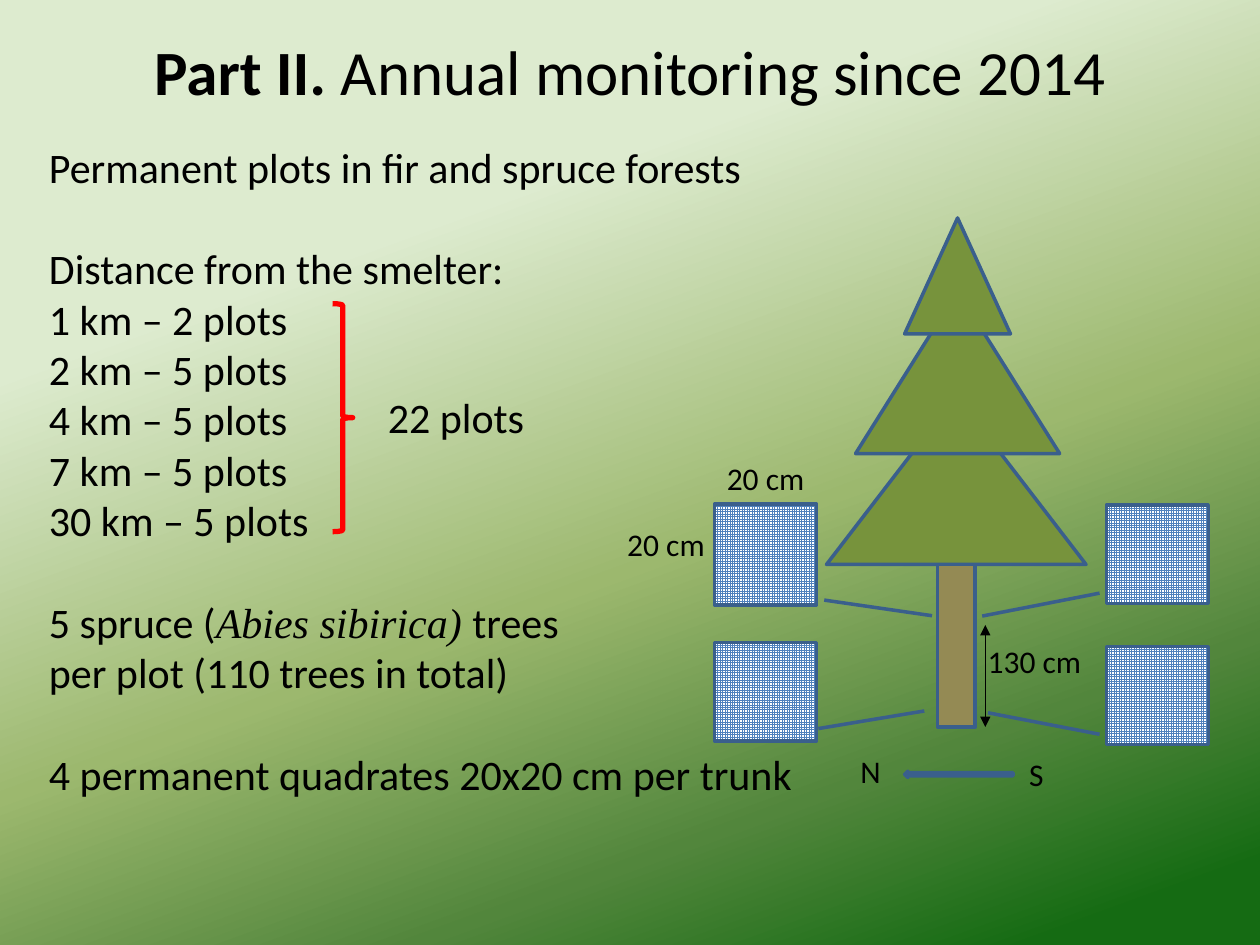
from typing import NamedTuple
from lxml import etree
from pptx import Presentation, util as u
from pptx.dml.color import RGBColor
from pptx.enum import dml, shapes, text
from pptx.oxml import ns

KIND = shapes.MSO_SHAPE
EDGE, LEAF, BARK, BLUE = "3A5F8C", "77933C", "948A54", "4F81BD"
BLACK, RED, WHITE = "000000", "FF0000", "FFFFFF"
SANS, SERIF = "Calibri", "Times New Roman"
BODY = 24
GAP = 29.3  # one line of body text, in points


class Box(NamedTuple):
    x: float
    y: float
    w: float
    h: float


class Run(NamedTuple):
    words: str
    bold: bool = False
    italic: bool = False
    font: str = SANS


class Para(NamedTuple):
    runs: list[Run]
    before: float = 0


class Quad(NamedTuple):
    box: Box
    lead: tuple[float, ...]


class Label(NamedTuple):
    words: str
    box: Box
    wrap: bool = True
    size: int = 18


def hue(code: str) -> RGBColor:
    return RGBColor.from_string(code)


def place(box: Box) -> list[u.Length]:
    return [u.Inches(v) for v in box]


def paint(slide) -> None:
    """Fill the background with a slanted green gradient."""
    fill = slide.background.fill
    fill.gradient()
    fill.gradient_angle = 290
    stops = slide.background.fill._fill._gradFill.find(ns.qn("a:gsLst"))
    for old in list(stops):
        stops.remove(old)
    for pos, code, alpha in ((27, "DDEBCF", 100), (57, "9CB86E", 100),
                             (78, "52863C", 64), (94, "156B13", 100)):
        stop = etree.SubElement(stops, ns.qn("a:gs"), pos=str(pos * 1000))
        tint = etree.SubElement(stop, ns.qn("a:srgbClr"), val=code)
        if alpha < 100:
            etree.SubElement(tint, ns.qn("a:alpha"), val=str(alpha * 1000))


def shape(slide, kind, box: Box, fill: str | None, edge: str = EDGE,
          width: float = 2):
    item = slide.shapes.add_shape(kind, *place(box))
    item.shadow.inherit = False
    if fill:
        item.fill.solid()
        item.fill.fore_color.rgb = hue(fill)
    else:
        item.fill.background()
    item.line.color.rgb = hue(edge)
    item.line.width = u.Pt(width)
    return item


def write(slide, box: Box, paras: list[Para], size: int, wrap: bool = True,
          align=text.PP_ALIGN.LEFT):
    frame = slide.shapes.add_textbox(*place(box)).text_frame
    frame.word_wrap = wrap
    for i, para in enumerate(paras):
        p = frame.add_paragraph() if i else frame.paragraphs[0]
        p.alignment = align
        p.space_before = u.Pt(para.before)
        for run in para.runs:
            r = p.add_run()
            r.text = run.words
            r.font.name, r.font.size = run.font, u.Pt(size)
            r.font.bold, r.font.italic = run.bold, run.italic
            r.font.color.rgb = hue(BLACK)
    return frame


def quad(slide, item: Quad) -> None:
    """Draw a gridded sample square with its leader line."""
    square = shape(slide, KIND.LINE_CALLOUT_1, item.box, None)
    for i, value in enumerate(item.lead):
        square.adjustments[i] = value
    square.fill.patterned()
    square.fill.pattern = dml.MSO_PATTERN.SMALL_GRID
    square.fill.fore_color.rgb = hue(BLUE)
    square.fill.back_color.rgb = hue(WHITE)


def span(slide, x: float, top: float, end: float) -> None:
    """Draw a vertical dimension line with two arrowheads."""
    line = slide.shapes.add_connector(
        shapes.MSO_CONNECTOR.STRAIGHT, *place(Box(x, top, x, end)))
    line.line.color.rgb = hue(BLACK)
    line.line.width = u.Pt(0.75)
    props = line.line._get_or_add_ln()
    for tag in ("a:headEnd", "a:tailEnd"):
        etree.SubElement(props, ns.qn(tag), type="triangle")
    etree.SubElement(line._element.spPr, ns.qn("a:effectLst"))


TITLE = [Para([Run("Part II.", bold=True),
               Run(" Annual monitoring since 2014")])]
NOTES = [
    Para([Run("Permanent plots in fir and spruce forests")]),
    Para([Run("Distance from the smelter:")], GAP),
    *(Para([Run(f"{km} km – {n} plots")])
      for km, n in ((1, 2), (2, 5), (4, 5), (7, 5), (30, 5))),
    Para([Run("5 spruce ("),
          Run("Abies sibirica) ", italic=True, font=SERIF),
          Run("trees")], GAP),
    Para([Run("per plot (110 trees in total)")]),
    Para([Run("4 permanent quadrates 20x20 cm per trunk")], GAP),
]
TREE = [
    (KIND.ISOSCELES_TRIANGLE, Box(6.56, 3.14, 2.06, 1.34), LEAF),
    (KIND.ISOSCELES_TRIANGLE, Box(6.79, 2.31, 1.62, 1.29), LEAF),
    (KIND.RECTANGLE, Box(7.44, 4.48, 0.3, 1.29), BARK),
    (KIND.ISOSCELES_TRIANGLE, Box(7.18, 1.73, 0.84, 0.92), LEAF),
]
WEST, EAST = 5.67, 8.78
QUADS = [
    Quad(Box(EAST, 5.13, 0.81, 0.78), (0.895, -0.066, 0.676, -1.159)),
    Quad(Box(WEST, 4, 0.81, 0.8), (0.954, 1.076, 1.109, 2.133)),
    Quad(Box(WEST, 5.1, 0.81, 0.78), (0.875, 1.019, 0.696, 2.057)),
    Quad(Box(EAST, 4.01, 0.81, 0.78), (0.895, -0.066, 1.128, -1.216)),
]
LABELS = [
    Label("20 cm", Box(WEST, 3.59, 0.97, 0.4)),
    Label("20 cm", Box(4.88, 4.12, 0.97, 0.4)),
    Label("N", Box(6.73, 5.92, 0.36, 0.4), False),
    Label("S", Box(8.07, 5.94, 0.44, 0.4)),
    Label("130 cm", Box(7.74, 5.05, 0.95, 0.4), False),
    Label("22 plots", Box(2.98, 3.06, 1.29, 0.5), False, BODY),
]


def main() -> None:
    deck = Presentation()
    deck.slide_width, deck.slide_height = u.Inches(10), u.Inches(7.5)
    slide = deck.slides.add_slide(deck.slide_layouts[6])
    paint(slide)

    title = write(slide, Box(0.12, 0.26, 9.76, 1.61), TITLE, 36,
                  align=text.PP_ALIGN.CENTER)
    title.margin_top = 0
    write(slide, Box(0.29, 1.07, 6.15, 5.35), NOTES, BODY, wrap=False)

    for kind, box, fill in TREE:
        shape(slide, kind, box, fill)
    for item in QUADS:
        quad(slide, item)
    north = shape(slide, KIND.RIGHT_ARROW, Box(7.18, 6.12, 0.86, 0.05), BLUE)
    north.rotation = 180
    span(slide, 7.82, 4.96, 5.77)
    shape(slide, KIND.RIGHT_BRACE, Box(2.64, 2.41, 0.16, 1.81), None, RED, 3)
    for item in LABELS:
        write(slide, item.box, [Para([Run(item.words)])], item.size, item.wrap)
    deck.save("out.pptx")


if __name__ == "__main__":
    main()
